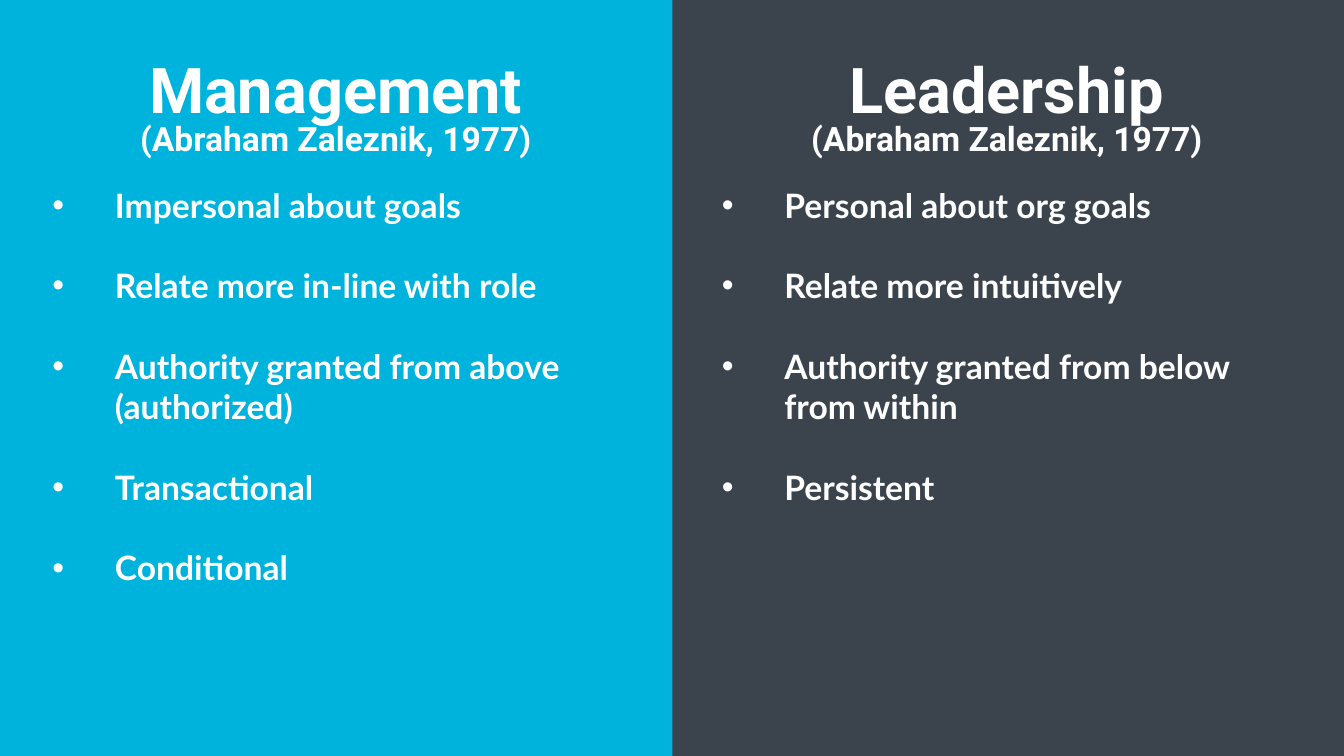
from lxml import etree
from pptx import Presentation
from pptx.dml.color import RGBColor
from pptx.enum.shapes import MSO_SHAPE
from pptx.enum.text import MSO_AUTO_SIZE, PP_ALIGN
from pptx.oxml.ns import qn
from pptx.util import Inches, Pt

RECTANGLE = MSO_SHAPE.RECTANGLE
CENTER = PP_ALIGN.CENTER
FIT_SHAPE = MSO_AUTO_SIZE.SHAPE_TO_FIT_TEXT

COLORS = {"leadership": "3B444D", "management": "00B3DC", "text": "FFFFFF"}
BULLET_INDENT = Inches(0.62)
BULLET_GAP = Pt(28.8)  # one line of 24 pt Lato
CITATION = "(Abraham Zaleznik, 1977)"

# Boxes are left, top, width, height in inches.
COLUMNS = [
    {
        "title": "Leadership",
        "color": "leadership",
        "panel": (6.65, -0.05, 6.69, 7.55),
        "heading": (6.96, 0.61, 6.05, 1.01),
        "list": (7.11, 1.81, 5.41, 3.28),
        "points": [
            "Personal about org goals",
            "Relate more intuitively",
            "Authority granted from below from within",
            "Persistent",
        ],
    },
    {
        "title": "Management",
        "color": "management",
        "panel": (0, -0.05, 6.67, 7.55),
        "heading": (0.41, 0.61, 5.84, 1.0),
        "list": (0.47, 1.81, 5.78, 4.09),
        "points": [
            "Impersonal about goals",
            "Relate more in-line with role",
            "Authority granted from above (authorized)",
            "Transactional",
            "Conditional",
        ],
    },
]


def add_text(slide, box, lines, margins):
    """Add a wrapping text box with one paragraph per line and return its frame."""
    frame = slide.shapes.add_textbox(*map(Inches, box)).text_frame
    frame.word_wrap = True
    frame.auto_size = FIT_SHAPE
    frame.margin_left = frame.margin_right = Inches(margins[0])
    frame.margin_top = frame.margin_bottom = Inches(margins[1])
    frame.text = "\n".join(lines)
    return frame


def style_runs(paragraph, font_name, size):
    for run in paragraph.runs:
        run.font.name = font_name
        run.font.size = Pt(size)
        run.font.bold = True
        run.font.color.rgb = RGBColor.from_string(COLORS["text"])


presentation = Presentation()
presentation.slide_width = Inches(13.33)
presentation.slide_height = Inches(7.5)
slide = presentation.slides.add_slide(presentation.slide_layouts[6])

for column in COLUMNS:
    panel = slide.shapes.add_shape(RECTANGLE, *map(Inches, column["panel"]))
    panel.shadow.inherit = False
    panel.fill.solid()
    panel.fill.fore_color.rgb = RGBColor.from_string(COLORS[column["color"]])
    panel.line.fill.background()

for column in COLUMNS:
    heading = add_text(slide, column["heading"], [column["title"], CITATION], (0.07, 0.04))
    for paragraph, size in zip(heading.paragraphs, (45, 24)):
        paragraph.alignment = CENTER
        paragraph.line_spacing = 0.8
        style_runs(paragraph, "Roboto", size)

    points = add_text(slide, column["list"], column["points"], (0.05, 0.02))
    for index, paragraph in enumerate(points.paragraphs):
        if index:
            paragraph.space_before = BULLET_GAP
        style_runs(paragraph, "Lato", 24)
        properties = paragraph._p.get_or_add_pPr()
        properties.set("marL", str(BULLET_INDENT))
        properties.set("indent", str(-BULLET_INDENT))
        etree.SubElement(properties, qn("a:buFont")).set("typeface", "Arial")
        etree.SubElement(properties, qn("a:buChar")).set("char", "•")

presentation.save("out.pptx")
